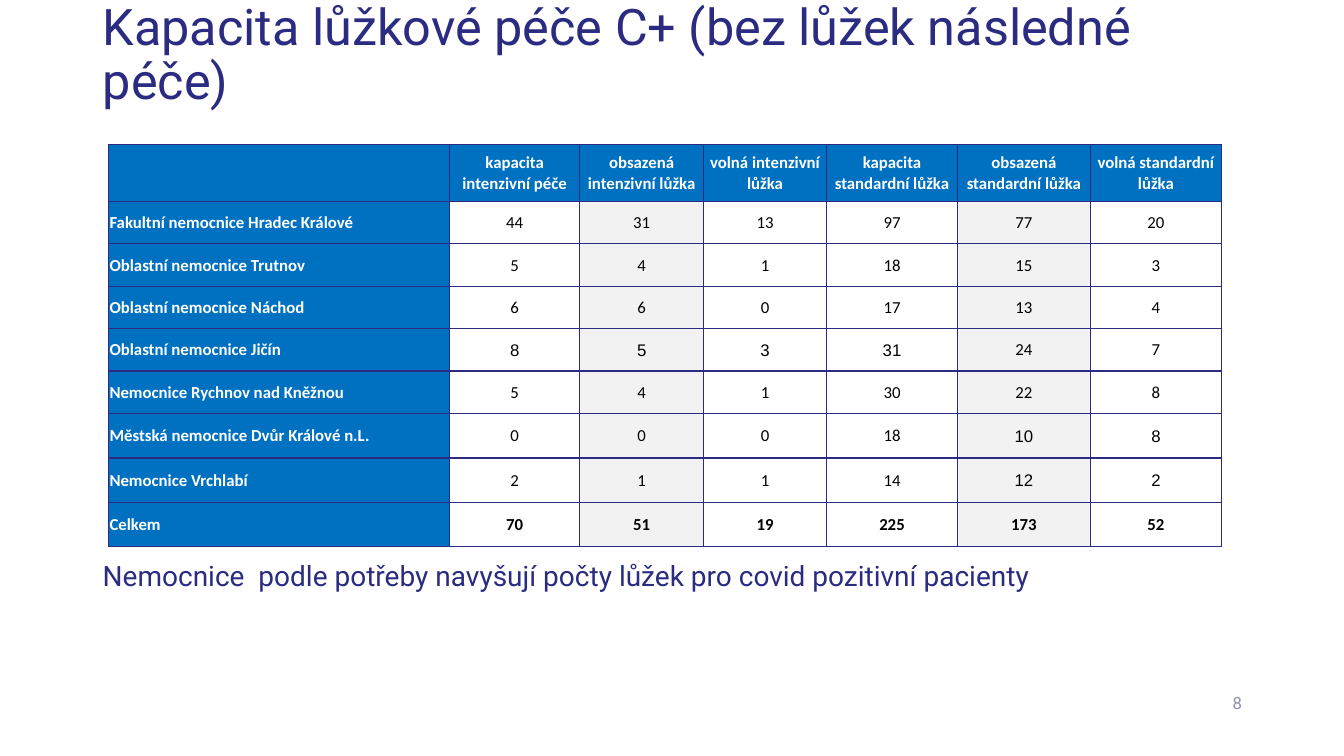
from lxml.etree import SubElement
from pptx import Presentation
from pptx.dml.color import RGBColor
from pptx.enum.text import MSO_ANCHOR, PP_ALIGN
from pptx.oxml.ns import qn
from pptx.util import Cm, Pt

NAVY = RGBColor(0x2B, 0x2B, 0x82)
BLUE = RGBColor(0x00, 0x70, 0xC0)
MUTED = RGBColor(0x8F, 0x8F, 0xAD)
LIGHT = RGBColor(0xF2, 0xF2, 0xF2)
WHITE = RGBColor(0xFF, 0xFF, 0xFF)
BLACK = RGBColor(0x00, 0x00, 0x00)

HEADINGS = [
    "", "kapacita intenzivní péče", "obsazená intenzivní lůžka", "volná intenzivní lůžka",
    "kapacita standardní lůžka", "obsazená standardní lůžka", "volná standardní lůžka",
]
HOSPITALS = [
    ["Fakultní nemocnice Hradec Králové", 44, 31, 13, 97, 77, 20],
    ["Oblastní nemocnice Trutnov", 5, 4, 1, 18, 15, 3],
    ["Oblastní nemocnice Náchod", 6, 6, 0, 17, 13, 4],
    ["Oblastní nemocnice Jičín", 8, 5, 3, 31, 24, 7],
    ["Nemocnice Rychnov nad Kněžnou", 5, 4, 1, 30, 22, 8],
    ["Městská nemocnice Dvůr Králové n.L.", 0, 0, 0, 18, 10, 8],
    ["Nemocnice Vrchlabí", 2, 1, 1, 14, 12, 2],
]
TOTALS = ["Celkem", 70, 51, 19, 225, 173, 52]
COLUMN_WIDTHS = [8.59, 3.28, 3.12, 3.1, 3.3, 3.35, 3.3]
ROW_HEIGHTS = [1.42] + [1.07] * 5 + [1.12] * 3
OCCUPIED_COLUMNS = {2, 5}
ARIAL_CELLS = {(4, 1), (4, 2), (4, 3), (4, 4), (6, 5), (6, 6), (7, 5), (7, 6)}


class SlideBuilder:
    text_font = "Roboto"
    table_font = "Calibri"
    table_size = 12
    border_color = NAVY
    border_width = Pt(1)

    def __init__(self, slide):
        self.slide = slide

    def apply(self, target, values):
        for name, value in values.items():
            setattr(target, name, value)

    def span(self, para, text, size, color, font, bold=False):
        span = para.add_run()
        span.text = text
        self.apply(span.font, {"name": font, "size": Pt(size), "bold": bold})
        span.font.color.rgb = color

    def text(self, text, left, top, width, height, size, color, **options):
        box = self.slide.shapes.add_textbox(Cm(left), Cm(top), Cm(width), Cm(height))
        anchor = options.get("anchor", MSO_ANCHOR.TOP)
        self.apply(box.text_frame, {"word_wrap": True, "vertical_anchor": anchor})
        para = box.text_frame.paragraphs[0]
        self.apply(para, {
            "alignment": options.get("alignment", PP_ALIGN.LEFT),
            "line_spacing": options.get("line_spacing", 1.0),
        })
        self.span(para, text, size, color, self.text_font)

    def border(self, cell):
        properties = cell._tc.get_or_add_tcPr()
        for side in ("a:lnL", "a:lnR", "a:lnT", "a:lnB"):
            line = SubElement(properties, qn(side), w=str(self.border_width))
            fill = SubElement(line, qn("a:solidFill"))
            SubElement(fill, qn("a:srgbClr"), val=str(self.border_color))

    def cell(self, cell, text, fill, color, font, bold, alignment):
        self.border(cell)
        self.apply(cell, {
            "vertical_anchor": MSO_ANCHOR.MIDDLE,
            "margin_left": Cm(0.02),
            "margin_right": Cm(0.02),
            "margin_top": Cm(0.02),
            "margin_bottom": 0,
        })
        cell.fill.solid()
        cell.fill.fore_color.rgb = fill
        para = cell.text_frame.paragraphs[0]
        para.alignment = alignment
        if text:
            self.span(para, text, self.table_size, color, font, bold)

    def table(self, rows, left, top, widths, heights):
        frame = self.slide.shapes.add_table(
            len(rows), len(widths), Cm(left), Cm(top), Cm(sum(widths)), Cm(sum(heights)))
        table = frame.table
        self.apply(table, {"first_row": False, "horz_banding": False})
        for column, width in zip(table.columns, widths):
            column.width = Cm(width)
        for row, height in zip(table.rows, heights):
            row.height = Cm(height)
        last = len(rows) - 1
        for row_index, values in enumerate(rows):
            for column_index, value in enumerate(values):
                heading = row_index == 0 or column_index == 0
                body_fill = LIGHT if column_index in OCCUPIED_COLUMNS else WHITE
                arial = (row_index, column_index) in ARIAL_CELLS
                self.cell(
                    table.cell(row_index, column_index),
                    str(value),
                    fill=BLUE if heading else body_fill,
                    color=WHITE if heading else BLACK,
                    font="Arial" if arial else self.table_font,
                    bold=heading or row_index == last,
                    alignment=PP_ALIGN.CENTER if column_index else PP_ALIGN.LEFT,
                )


def main():
    deck = Presentation()
    deck.slide_width, deck.slide_height = Cm(33.87), Cm(19.05)
    page = SlideBuilder(deck.slides.add_slide(deck.slide_layouts[6]))
    page.text("Kapacita lůžkové péče C+ (bez lůžek následné péče)", 2.34, 1.04, 29.21, 1.88,
              36, NAVY, anchor=MSO_ANCHOR.BOTTOM, line_spacing=0.9)
    page.text("8", 28.65, 17.2, 2.9, 1.02, 12, MUTED,
              anchor=MSO_ANCHOR.MIDDLE, alignment=PP_ALIGN.RIGHT)
    page.text("Nemocnice  podle potřeby navyšují počty lůžek pro covid pozitivní pacienty",
              2.34, 14.05, 29.21, 1.1, 20, NAVY,
              alignment=PP_ALIGN.JUSTIFY, line_spacing=0.9)
    page.table([HEADINGS, *HOSPITALS, TOTALS], 2.74, 3.65, COLUMN_WIDTHS, ROW_HEIGHTS)
    deck.save("out.pptx")


if __name__ == "__main__":
    main()
